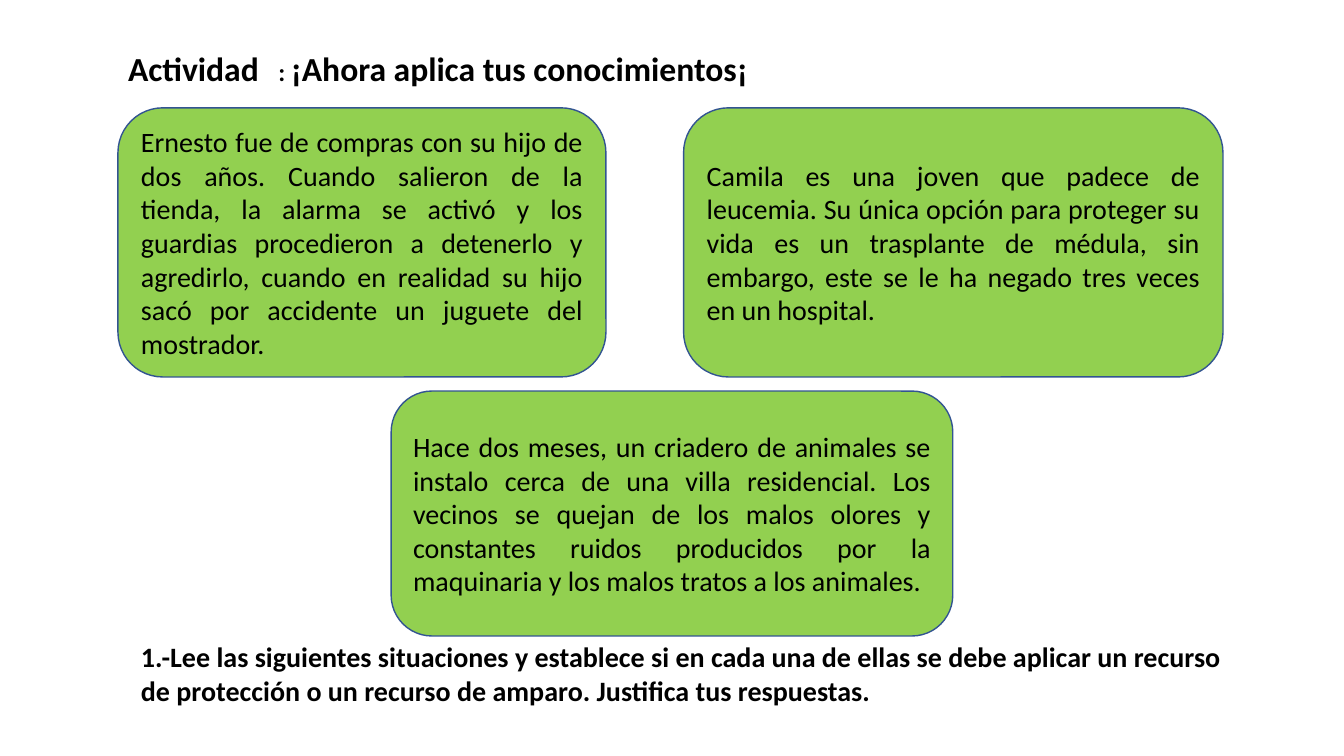
from dataclasses import dataclass

from lxml.etree import SubElement
from pptx import Presentation
from pptx.dml.color import RGBColor
from pptx.enum.shapes import MSO_SHAPE
from pptx.enum.text import MSO_ANCHOR, MSO_AUTO_SIZE, PP_ALIGN
from pptx.oxml.ns import qn
from pptx.util import Emu, Pt

EMU_PER_PX = 9144  # 100 px to the inch


@dataclass(frozen=True)
class Theme:
    font: str = "Calibri"
    text: RGBColor = RGBColor(0x00, 0x00, 0x00)
    card_fill: RGBColor = RGBColor(0x92, 0xD0, 0x50)
    card_line: RGBColor = RGBColor(0x32, 0x54, 0x91)
    title_size: int = 24
    colon_size: int = 18
    body_size: int = 20
    line_width: int = 1


THEME = Theme()

SITUATIONS = [
    ((117, 107, 484, 267),
     "Ernesto fue de compras con su hijo de dos años. Cuando salieron de la "
     "tienda, la alarma se activó y los guardias procedieron a detenerlo y "
     "agredirlo, cuando en realidad su hijo sacó por accidente un juguete del "
     "mostrador."),
    ((678, 107, 535, 267),
     "Camila es una joven que padece de leucemia. Su única opción para proteger "
     "su vida es un trasplante de médula, sin embargo, este se le ha negado "
     "tres veces en un hospital."),
    ((388, 388, 557, 243),
     "Hace dos meses, un criadero de animales se instalo cerca de una villa "
     "residencial. Los vecinos se quejan de los malos olores y constantes "
     "ruidos producidos por la maquinaria y los malos tratos a los animales."),
]
INSTRUCTION = (
    "1.-Lee las siguientes situaciones y establece si en cada una de ellas se "
    "debe aplicar un recurso de protección o un recurso de amparo. Justifica "
    "tus respuestas."
)


def px(length):
    return Emu(length * EMU_PER_PX)


def format_font(font, size, bold=False):
    font.name = THEME.font
    font.size = Pt(size)
    font.bold = bold
    font.color.rgb = THEME.text


def add_tab_stop(paragraph, position):
    tab_list = SubElement(paragraph._p.get_or_add_pPr(), qn("a:tabLst"))
    SubElement(tab_list, qn("a:tab"), pos=str(px(position)), algn="l")


def fill_title(slide, box, tab_position):
    """Write the heading, with its small colon set at a tab stop."""
    title = slide.shapes.title
    title.left, title.top, title.width, title.height = map(px, box)
    text_frame = title.text_frame
    text_frame.word_wrap = True
    text_frame.auto_size = MSO_AUTO_SIZE.SHAPE_TO_FIT_TEXT
    text_frame.vertical_anchor = MSO_ANCHOR.TOP
    paragraph = text_frame.paragraphs[0]
    paragraph.alignment = PP_ALIGN.LEFT
    add_tab_stop(paragraph, tab_position)
    for text, size in (
        ("Actividad", THEME.title_size),
        ("\t: ", THEME.colon_size),
        ("¡Ahora aplica tus conocimientos¡", THEME.title_size),
    ):
        run = paragraph.add_run()
        run.text = text
        format_font(run.font, size, bold=True)


def add_situation(slide, box, text):
    card = slide.shapes.add_shape(MSO_SHAPE.ROUNDED_RECTANGLE, *map(px, box))
    card.shadow.inherit = False
    card.fill.solid()
    card.fill.fore_color.rgb = THEME.card_fill
    card.line.color.rgb = THEME.card_line
    card.line.width = Pt(THEME.line_width)
    text_frame = card.text_frame
    text_frame.word_wrap = True
    text_frame.vertical_anchor = MSO_ANCHOR.MIDDLE
    text_frame.text = text
    paragraph = text_frame.paragraphs[0]
    paragraph.alignment = PP_ALIGN.JUSTIFY
    format_font(paragraph.runs[0].font, THEME.body_size)


def add_instruction(slide, box, text):
    text_frame = slide.shapes.add_textbox(*map(px, box)).text_frame
    text_frame.word_wrap = True
    text_frame.auto_size = MSO_AUTO_SIZE.SHAPE_TO_FIT_TEXT
    text_frame.text = text
    format_font(text_frame.paragraphs[0].runs[0].font, THEME.body_size, bold=True)


def main():
    presentation = Presentation()
    presentation.slide_width, presentation.slide_height = px(1333), px(750)
    title_only = presentation.slide_layouts.get_by_name("Title Only")
    slide = presentation.slides.add_slide(title_only)
    fill_title(slide, (117, 43, 690, 50), tab_position=149)
    for box, text in SITUATIONS:
        add_situation(slide, box, text)
    add_instruction(slide, (130, 630, 1117, 77), INSTRUCTION)
    presentation.save("out.pptx")


if __name__ == "__main__":
    main()
